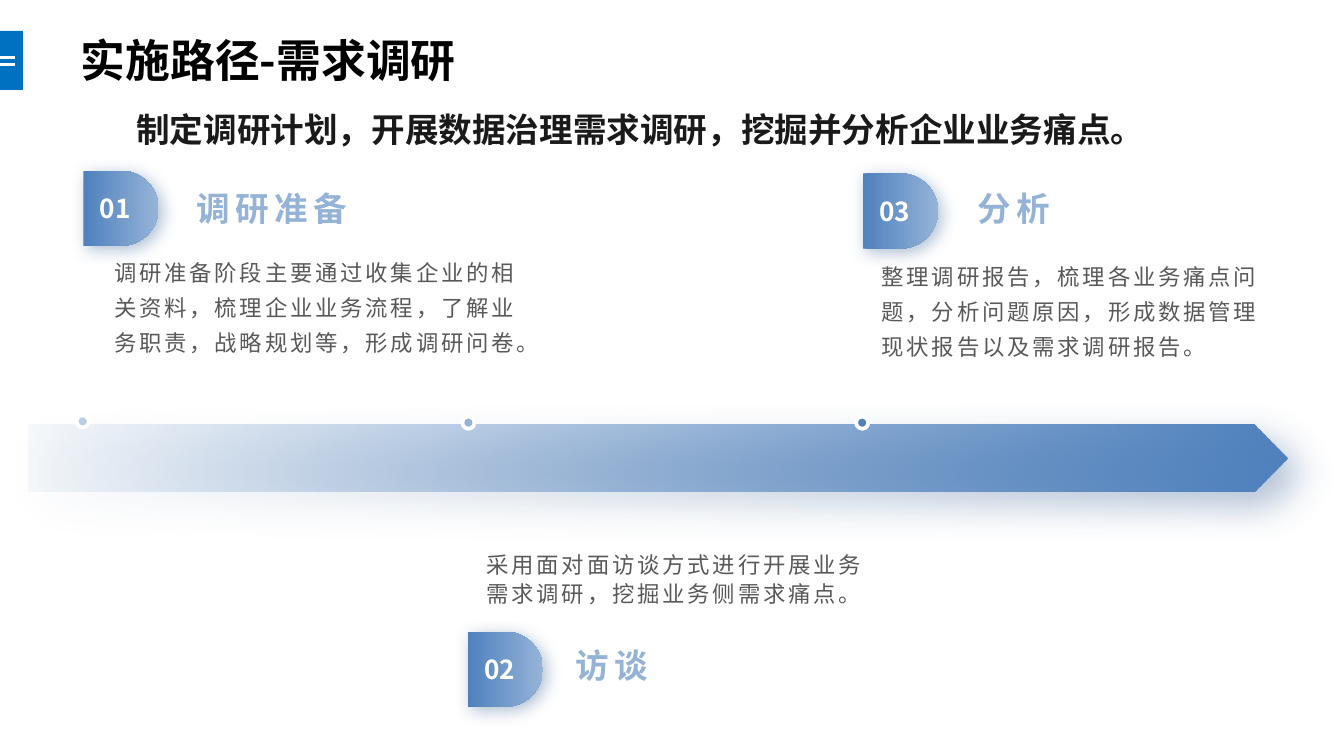
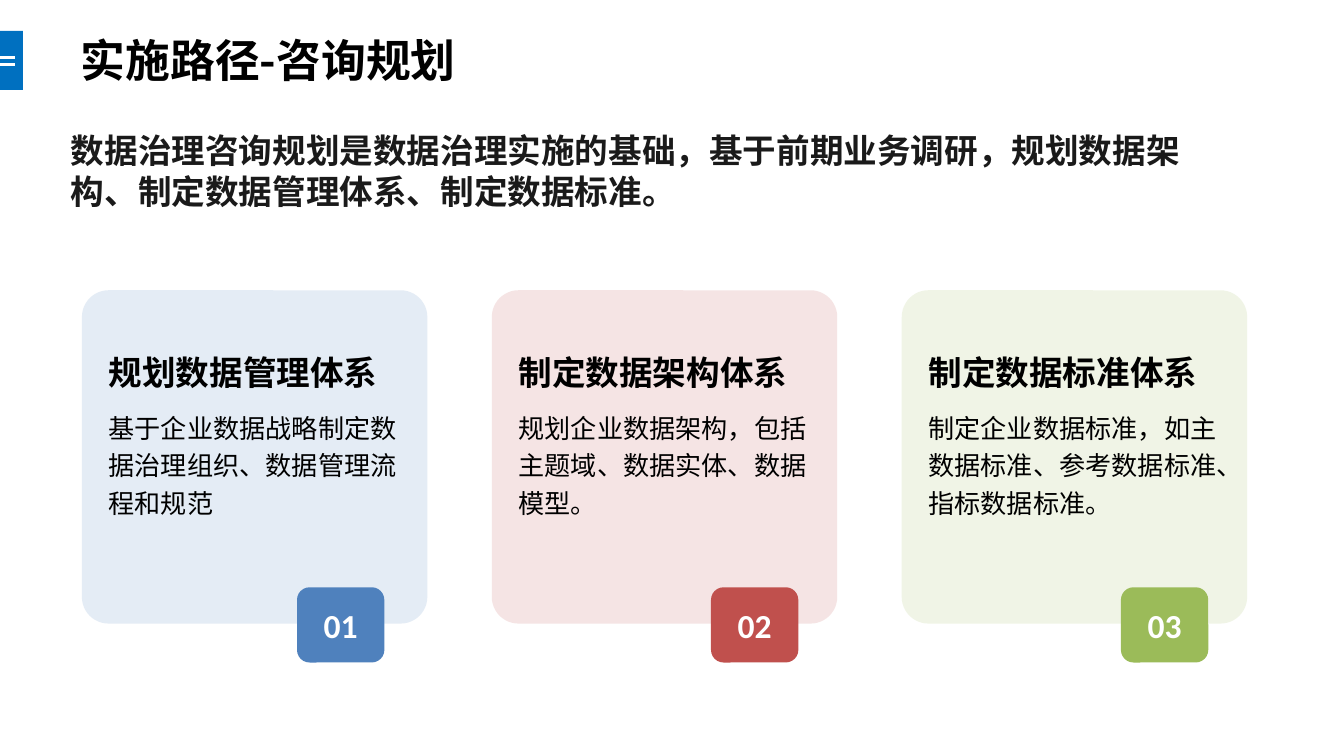
from lxml import etree
from pptx import Presentation
from pptx.dml.color import RGBColor
from pptx.enum.shapes import MSO_CONNECTOR, MSO_SHAPE
from pptx.enum.text import MSO_ANCHOR, MSO_AUTO_SIZE, PP_ALIGN
from pptx.oxml.ns import qn
from pptx.util import Emu, Pt

LINE = MSO_CONNECTOR.STRAIGHT
RECT, ROUND = MSO_SHAPE.RECTANGLE, MSO_SHAPE.ROUNDED_RECTANGLE
ARROW, DELAY, OVAL = MSO_SHAPE.PENTAGON, MSO_SHAPE.FLOWCHART_DELAY, MSO_SHAPE.OVAL
TOP, MID, LOW = MSO_ANCHOR.TOP, MSO_ANCHOR.MIDDLE, MSO_ANCHOR.BOTTOM
LEFT, CENTER = PP_ALIGN.LEFT, PP_ALIGN.CENTER
FIXED, GROW = MSO_AUTO_SIZE.NONE, MSO_AUTO_SIZE.SHAPE_TO_FIT_TEXT

SCALE = 9144  # EMU per px, 100 px to the inch
WIDE = 1000
SANS, LATIN = "Noto Sans CJK SC", "Calibri"
HUES = {
    "band": "0070C0", "white": "FFFFFF", "black": "000000", "ink": "1A1A1A",
    "gray": "595959", "blue": "4F81BD", "sky": "95B3D7", "pale": "B9CDE5",
    "navy": "376092", "red": "C0504D", "green": "9BBB59",
}


def px(num):
    return Emu(num * SCALE)


def hue(name):
    return RGBColor.from_string(HUES[name])


def write(shape, text, size=12, font=SANS, color="black", bold=False, align=LEFT,
          anchor=TOP, inset=None, lead=None, track=0, fit=FIXED):
    """Put one formatted paragraph into a shape."""
    frame = shape.text_frame
    frame.word_wrap = True
    frame.auto_size = fit
    frame.vertical_anchor = anchor
    if inset is not None:
        frame.margin_left = frame.margin_right = px(inset)
        frame.margin_top = frame.margin_bottom = px(inset)
    para = frame.paragraphs[0]
    para.alignment = align
    if lead:
        para.line_spacing = lead
    run = para.add_run()
    run.text = text
    run.font.size, run.font.bold, run.font.name = Pt(size), bold, font
    run.font.color.rgb = hue(color)
    props = run._r.get_or_add_rPr()
    if track:
        props.set("spc", str(int(track * 100)))
    etree.SubElement(props, qn("a:ea")).set("typeface", SANS)


class Deck:
    def __init__(self):
        self.show = Presentation()
        self.show.slide_width = px(WIDE)
        self.show.slide_height = Emu(px(WIDE) * 9 // 16)
        self.page = self.area = None

    def start(self, title):
        """Add a slide with the side band and its title."""
        self.page = self.show.slides.add_slide(self.show.slide_layouts[5])
        self.area = self.page.shapes
        self.shape(RECT, (0, 23, 17, 44), "band")
        for y in (43, 48):
            self.line((0, y), (11, y), "white", 1.5)
        head = self.area.title
        head.left, head.top, head.width, head.height = map(px, (50, 21, 833, 46))
        write(head, title, size=24, bold=True, anchor=MID)

    def group(self):
        self.area = self.page.shapes.add_group_shape().shapes

    def ungroup(self):
        self.area = self.page.shapes

    def shape(self, kind, box, fill, edge=None, alpha=None, round=None):
        """Add a shape; a pair of colours makes a left-to-right gradient."""
        item = self.area.add_shape(kind, *map(px, box))
        item.shadow.inherit = False
        if round is not None:
            item.adjustments[0] = round
        if isinstance(fill, tuple):
            item.fill.gradient()
            item.fill.gradient_angle = 0
            for stop, name in zip(item.fill.gradient_stops, fill):
                stop.color.rgb = hue(name)
        else:
            item.fill.solid()
            item.fill.fore_color.rgb = hue(fill)
        if alpha is not None:
            self.fade(item._element.spPr.find(".//" + qn("a:srgbClr")), alpha)
        if edge:
            item.line.color.rgb = hue(edge)
            item.line.width = Pt(2)
        else:
            item.line.fill.background()
        return item

    def fade(self, color, alpha):
        etree.SubElement(color, qn("a:alpha")).set("val", str(alpha * 1000))

    def shade(self, item, blur, dist):
        """Cast a soft shadow down and to the right."""
        effect = item._element.spPr.find(qn("a:effectLst"))
        cast = etree.SubElement(effect, qn("a:outerShdw"), blurRad=str(Pt(blur)),
                                dist=str(Pt(dist)), dir=str(45 * 60000),
                                algn="tl", rotWithShape="0")
        color = etree.SubElement(cast, qn("a:srgbClr"), val=HUES["navy"])
        self.fade(color, 40)

    def line(self, begin, end, color, width):
        item = self.area.add_connector(LINE, *map(px, begin + end))
        item.line.color.rgb = hue(color)
        item.line.width = Pt(width)
        etree.SubElement(item._element.spPr, qn("a:effectLst"))

    def text(self, box, words, **form):
        write(self.area.add_textbox(*map(px, box)), words, **form)

    def lead(self, box, words, **form):
        self.text(box, words, size=18, font=LATIN, color="ink", bold=True,
                  fit=GROW, **form)

    def step(self, num, spot, name, head, note, body, anchor, low, lead):
        """Add a numbered tab with its heading and note."""
        tab = self.shape(DELAY, (*spot, 56, 56), ("blue", "sky"))
        self.shade(tab, 9, 3)
        write(tab, num, size=14, color="white", bold=True, align=CENTER, anchor=MID)
        self.text(note, body, color="gray", track=1.5, inset=0, lead=lead, anchor=low)
        self.text(head, name, size=18, color="sky", bold=True, track=3,
                  inset=0, anchor=anchor)

    def card(self, num, left, tag, color, name, body):
        """Add a tinted card with a number badge on its lower edge."""
        self.group()
        self.shape(ROUND, (left, 216, 257, 248), color, alpha=15, round=0.08)
        self.text((left + 10, 297, 235, 125), body, size=14, font=LATIN, lead=1.2)
        self.text((left + 10, 238, 235, 59), name, size=18, font=LATIN, bold=True,
                  anchor=LOW)
        badge = self.shape(ROUND, (tag, 437, 65, 56), color)
        write(badge, num, size=18, font=LATIN, color="white", bold=True,
              align=CENTER, anchor=MID)
        self.ungroup()


def survey(deck):
    deck.start("实施路径-需求调研")
    # Timeline arrow and its dots
    arrow = deck.shape(ARROW, (21, 316, 937, 50), ("blue", "blue"), alpha=5)
    deck.shade(arrow, 20, 10)
    for left, top, color in ((57, 309, "pale"), (344, 310, "sky"), (637, 310, "blue")):
        deck.shape(OVAL, (left, top, 9, 9), color, edge="white")
    # Steps above and below the arrow
    deck.step("01", (62, 127), "调研准备", (146, 116, 196, 54), (85, 187, 309, 91),
              "调研准备阶段主要通过收集企业的相关资料，梳理企业业务流程，了解业务职责，"
              "战略规划等，形成调研问卷。", LOW, TOP, 1.3)
    deck.step("03", (642, 129), "分析", (727, 116, 196, 54), (656, 190, 291, 126),
              "整理调研报告，梳理各业务痛点问题，分析问题原因，形成数据管理现状报告"
              "以及需求调研报告。", LOW, TOP, 1.3)
    deck.step("02", (348, 470), "访谈", (428, 480, 201, 121), (362, 339, 294, 113),
              "采用面对面访谈方式进行开展业务需求调研，挖掘业务侧需求痛点。",
              TOP, LOW, 1.1)
    deck.lead((43, 76, 867, 40),
              "制定调研计划，开展数据治理需求调研，挖掘并分析企业业务痛点。",
              align=CENTER)


def plan(deck):
    deck.start("实施路径-咨询规划")
    # Three cards at equal steps
    cards = (
        (221, "blue", "规划数据管理体系",
         "基于企业数据战略制定数据治理组织、数据管理流程和规范"),
        (529, "red", "制定数据架构体系",
         "规划企业数据架构，包括主题域、数据实体、数据模型。"),
        (834, "green", "制定数据标准体系",
         "制定企业数据标准，如主数据标准、参考数据标准、指标数据标准。"),
    )
    for i, card in enumerate(cards):
        deck.card(f"{i + 1:02}", 61 + 305 * i, *card)
    deck.lead((43, 92, 867, 71),
              "数据治理咨询规划是数据治理实施的基础，基于前期业务调研，规划数据架构、"
              "制定数据管理体系、制定数据标准。")


def main():
    deck = Deck()
    survey(deck)
    plan(deck)
    deck.show.save("out.pptx")


if __name__ == "__main__":
    main()
